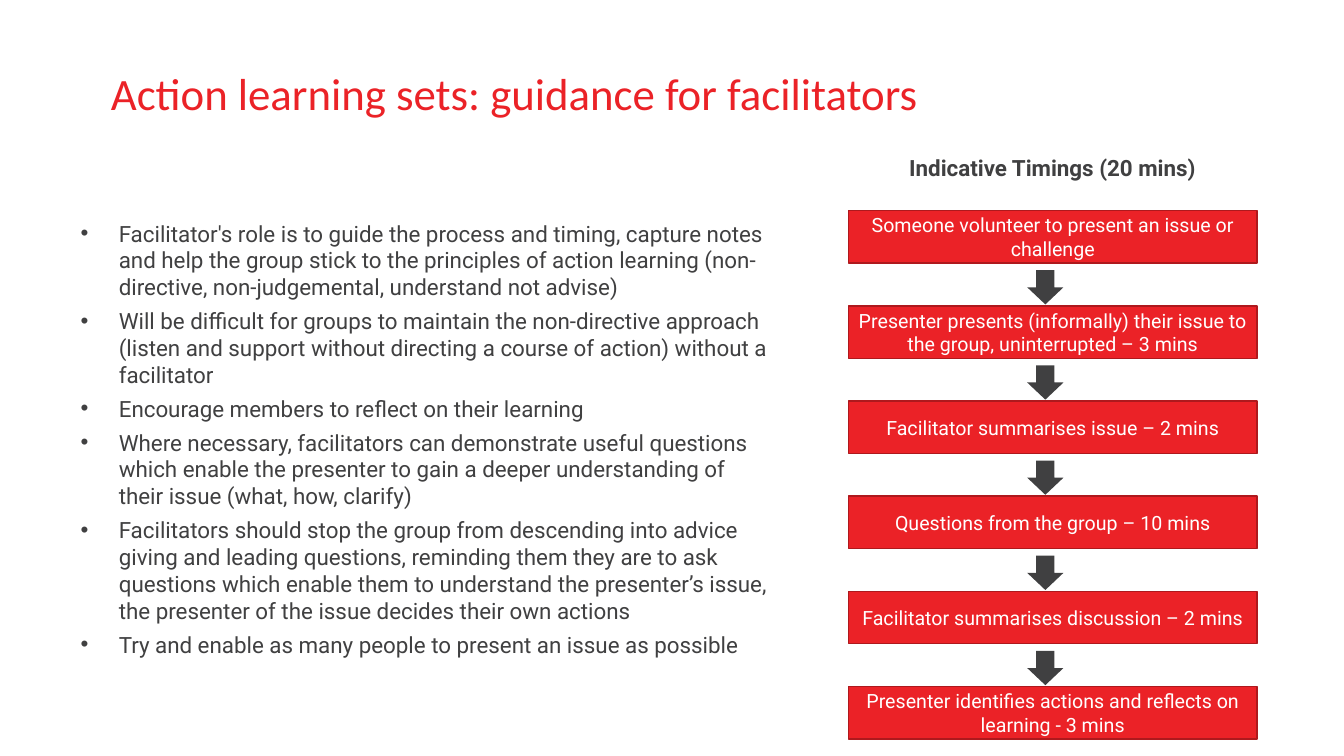
"""Build the slide on guidance for facilitators of action learning sets."""
from dataclasses import dataclass

from lxml.etree import SubElement
from pptx import Presentation
from pptx.dml.color import RGBColor
from pptx.enum.shapes import MSO_SHAPE
from pptx.enum.text import MSO_ANCHOR, MSO_AUTO_SIZE, PP_ALIGN
from pptx.oxml.ns import qn
from pptx.util import Inches, Pt


@dataclass(frozen=True)
class Theme:
    red: RGBColor = RGBColor.from_string("EB2227")
    dark_red: RGBColor = RGBColor.from_string("AE191D")
    grey: RGBColor = RGBColor.from_string("404041")
    white: RGBColor = RGBColor.from_string("FFFFFF")
    heading_font: str = "Calibri"
    text_font: str = "Roboto"
    title_size: Pt = Pt(32)
    text_size: Pt = Pt(16)
    step_size: Pt = Pt(14)


theme = Theme()
deck = Presentation()
deck.slide_width, deck.slide_height = Inches(13.33), Inches(7.5)
column, row = deck.slide_width / 100, deck.slide_height / 100


def place(left, top, width, height):
    """Turn grid columns and rows into slide lengths."""
    return [int(n * unit) for n, unit in zip((left, top, width, height), (column, row) * 2)]


def style(para, font, size, color, align=PP_ALIGN.LEFT, bold=False):
    """Format a paragraph and its runs."""
    para.alignment = align
    for span in para.runs:
        span.font.name, span.font.size, span.font.bold = font, size, bold
        span.font.color.rgb = color


guidance = [
    "Facilitator's role is to guide the process and timing, capture notes and help the group stick "
    "to the principles of action learning (non-directive, non-judgemental, understand not advise)",
    "Will be difficult for groups to maintain the non-directive approach (listen and support "
    "without directing a course of action) without a facilitator",
    "Encourage members to reflect on their learning",
    "Where necessary, facilitators can demonstrate useful questions which enable the presenter to "
    "gain a deeper understanding of their issue (what, how, clarify)",
    "Facilitators should stop the group from descending into advice giving and leading questions, "
    "reminding them they are to ask questions which enable them to understand the presenter’s "
    "issue, the presenter of the issue decides their own actions",
    "Try and enable as many people to present an issue as possible",
]
steps = [
    "Someone volunteer to present an issue or challenge",
    "Presenter presents (informally) their issue to the group, uninterrupted – 3 mins",
    "Facilitator summarises issue – 2 mins",
    "Questions from the group – 10 mins",
    "Facilitator summarises discussion – 2 mins",
    "Presenter identifies actions and reflects on learning - 3 mins",
]
step_left, step_width, step_height = 63.15, 30.38, 6.93
first_step, step_pitch = 27.87, 12.59
arrow_left, arrow_width, arrow_height, arrow_drop = 76.43, 2.7, 4.53, 7.87

page = deck.slides.add_slide(deck.slide_layouts[5])
title = page.shapes.title
title.left, title.top, title.width, title.height = place(3.75, 8.8, 95.18, 8.13)
frame = title.text_frame
frame.text = "Action learning sets: guidance for facilitators"
frame.auto_size, frame.word_wrap = MSO_AUTO_SIZE.NONE, True
frame.vertical_anchor, frame.margin_left = MSO_ANCHOR.TOP, Inches(0.6)
frame.paragraphs[0].line_spacing = 0.9
style(frame.paragraphs[0], theme.heading_font, theme.title_size, theme.red)

frame = page.shapes.add_textbox(*place(1.5, 28.4, 56.48, 67.87)).text_frame
frame.word_wrap = True
frame.text = "\n".join(guidance)
for para in frame.paragraphs:
    style(para, theme.text_font, theme.text_size, theme.grey)
    para.space_before = Pt(5)
    properties = para._p.get_or_add_pPr()
    properties.set("marL", str(Inches(0.88)))
    properties.set("indent", str(Inches(-0.38)))
    SubElement(properties, qn("a:buFont"), typeface="Arial")
    SubElement(properties, qn("a:buChar"), char="•")

frame = page.shapes.add_textbox(*place(step_left, 19.73, step_width, 10.4)).text_frame
frame.word_wrap, frame.margin_left = True, Inches(0.6)
frame.text = "Indicative Timings (20 mins)"
style(frame.paragraphs[0], theme.text_font, theme.text_size, theme.grey, bold=True)

for index, step in enumerate(steps):
    top = first_step + index * step_pitch
    box = page.shapes.add_shape(
        MSO_SHAPE.RECTANGLE, *place(step_left, top, step_width, step_height))
    box.shadow.inherit = False
    box.fill.solid()
    box.fill.fore_color.rgb = theme.red
    box.line.color.rgb, box.line.width = theme.dark_red, Pt(1)
    frame = box.text_frame
    frame.word_wrap, frame.vertical_anchor = True, MSO_ANCHOR.MIDDLE
    frame.text = step
    style(frame.paragraphs[0], theme.text_font, theme.step_size, theme.white, PP_ALIGN.CENTER)
    if index < len(steps) - 1:
        arrow = page.shapes.add_shape(
            MSO_SHAPE.DOWN_ARROW, *place(arrow_left, top + arrow_drop, arrow_width, arrow_height))
        arrow.shadow.inherit = False
        arrow.fill.solid()
        arrow.fill.fore_color.rgb = theme.grey
        arrow.line.fill.background()

deck.save("out.pptx")
